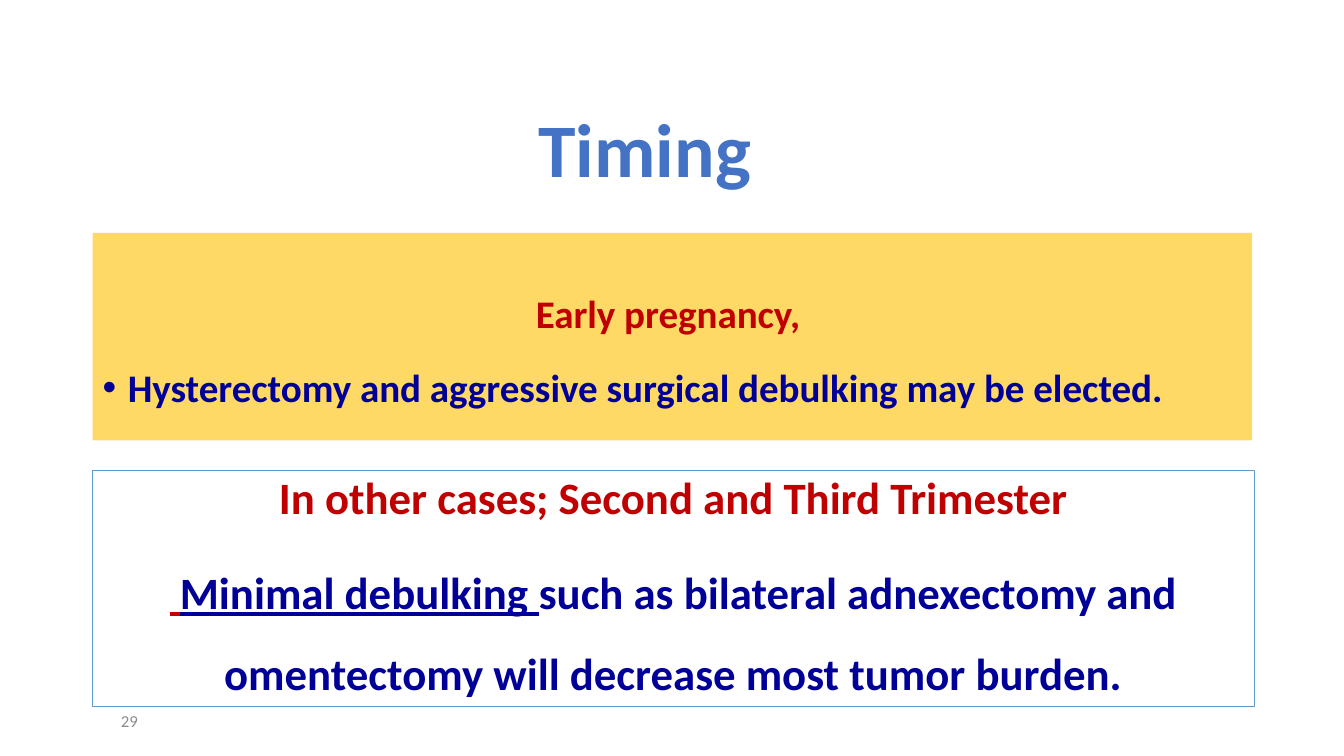
from lxml import etree
from pptx import Presentation
from pptx.dml.color import RGBColor
from pptx.enum.shapes import MSO_SHAPE
from pptx.enum.text import MSO_ANCHOR, MSO_AUTO_SIZE, PP_ALIGN
from pptx.oxml.ns import qn
from pptx.util import Inches, Pt

RECT = MSO_SHAPE.RECTANGLE
LEFT, CENTER = PP_ALIGN.LEFT, PP_ALIGN.CENTER
TOP, MIDDLE = MSO_ANCHOR.TOP, MSO_ANCHOR.MIDDLE
NO_FIT = MSO_AUTO_SIZE.NONE

COLORS = {
    "title": "4472C4",
    "heading": "C00000",
    "body": "000099",
    "panel": "FFD966",
    "border": "5B9BD5",
    "number": "8C8C8C",
}


def rgb(name):
    return RGBColor.from_string(COLORS[name])


def add_run(p, text, size, color, bold=True, underline=False, font="Calibri"):
    r = p.add_run()
    r.text = text
    r.font.name = font
    r.font.size = Pt(size)
    r.font.bold = bold
    r.font.underline = underline
    r.font.color.rgb = rgb(color)


def add_bullet(p, indent):
    """Give the paragraph a round bullet with a hanging indent in inches."""
    pPr = p._p.get_or_add_pPr()
    pPr.set("marL", str(Inches(indent)))
    pPr.set("indent", str(-Inches(indent)))
    etree.SubElement(pPr, qn("a:buFont")).set("typeface", "Arial")
    etree.SubElement(pPr, qn("a:buChar")).set("char", "•")


class SlideBuilder:
    def __init__(self, prs):
        self.s = prs.slides.add_slide(prs.slide_layouts[5])

    def place(self, sp, left, top, width, height):
        sp.left, sp.top = Inches(left), Inches(top)
        sp.width, sp.height = Inches(width), Inches(height)

    def frame(self, sp, anchor=TOP, wrap=True, inset_top=0.05):
        tf = sp.text_frame
        tf.auto_size = NO_FIT
        tf.word_wrap = wrap
        tf.vertical_anchor = anchor
        tf.margin_top = Inches(inset_top)
        return tf

    def paragraph(self, tf, runs, align=CENTER, spacing=1.0, before=0, bullet=0):
        """Add a paragraph from (text, format) pairs, filling an empty first one."""
        first = tf.paragraphs[0]
        p = tf.add_paragraph() if first.runs else first
        p.alignment = align
        p.line_spacing = spacing
        p.space_before = Pt(before)
        if bullet:
            add_bullet(p, bullet)
        for text, style in runs:
            add_run(p, text, **style)

    def title(self, text, *box):
        sp = self.s.shapes.title
        self.place(sp, *box)
        tf = self.frame(sp, wrap=False)
        self.paragraph(tf, [(text, dict(size=54, color="title"))])

    def panel(self, *box, fill=None, line=None, inset_top=0.05):
        sp = self.s.shapes.add_shape(RECT, *map(Inches, box))
        sp.shadow.inherit = False
        if fill:
            sp.fill.solid()
            sp.fill.fore_color.rgb = rgb(fill)
        else:
            sp.fill.background()
        if line:
            sp.line.color.rgb = rgb(line)
            sp.line.width = Pt(0.75)
        else:
            sp.line.fill.background()
        return self.frame(sp, inset_top=inset_top)

    def number(self, text, *box):
        sp = self.s.shapes.add_textbox(*map(Inches, box))
        tf = self.frame(sp, anchor=MIDDLE)
        style = dict(size=12, color="number", bold=False)
        self.paragraph(tf, [(text, style)], align=LEFT)


def main():
    prs = Presentation()
    prs.slide_width, prs.slide_height = Inches(13.33), Inches(7.5)
    slide = SlideBuilder(prs)

    slide.title("Timing ", 5.23, 0.96, 2.5, 1.01)

    early = slide.panel(0.92, 2.31, 11.5, 2.06, fill="panel", inset_top=0.69)
    slide.paragraph(early, [("Early pregnancy, ", dict(size=27.9, color="heading"))],
                    spacing=0.7)
    slide.paragraph(
        early,
        [("Hysterectomy and aggressive surgical debulking may be elected.",
          dict(size=27.9, color="body"))],
        align=LEFT, spacing=1.3, before=10, bullet=0.25)

    later = slide.panel(0.92, 4.67, 11.52, 2.34, line="border")
    heading = dict(size=32, color="heading")
    body = dict(size=32, color="body")
    slide.paragraph(later, [("In other cases; Second and Third Trimester", heading)],
                    spacing=0.9)
    slide.paragraph(
        later,
        [(" ", dict(heading, underline=True)),
         ("Minimal debulking ", dict(body, underline=True)),
         ("such as bilateral adnexectomy and omentectomy will decrease "
          "most tumor burden.", body)],
        spacing=1.5, before=10)

    slide.number("29", 1.1, 6.95, 3, 0.4)
    prs.save("out.pptx")


if __name__ == "__main__":
    main()
